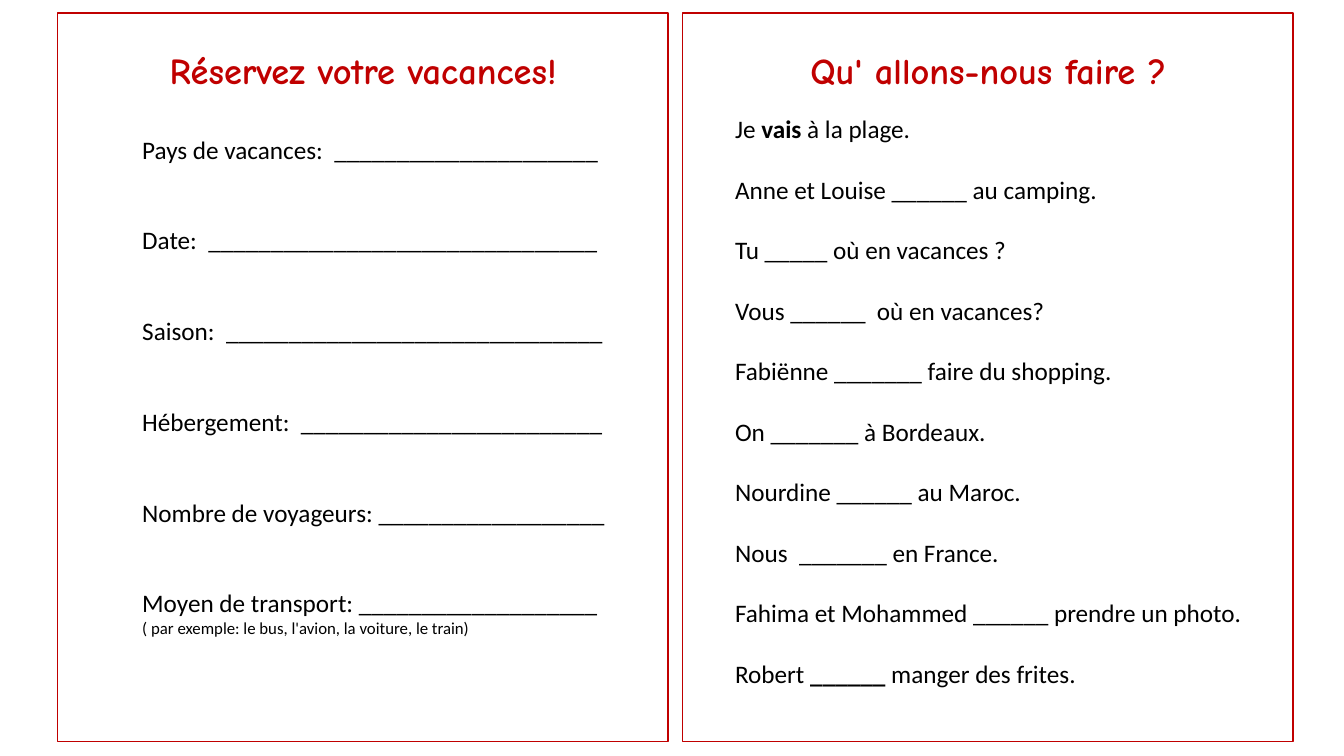
from pptx import Presentation
from pptx import util as u
from pptx.dml.color import RGBColor
from pptx.enum import shapes, text
from lxml import etree

RED = RGBColor(0xC0, 0x00, 0x00)
BLACK = RGBColor(0x00, 0x00, 0x00)
WHITE = RGBColor(0xFF, 0xFF, 0xFF)
A = "{http://schemas.openxmlformats.org/drawingml/2006/main}"

BOOKING = [
    "Pays de vacances:  _____________________",
    "Date:  _______________________________",
    "Saison:  ______________________________",
    "Hébergement:  ________________________",
    "Nombre de voyageurs: __________________",
    "Moyen de transport: ___________________",
    "( par exemple: le bus, l'avion, la voiture, le train)",
]
SENTENCES = [
    "Je *vais* à la plage.",
    "Anne et Louise ______ au camping.",
    "Tu _____ où en vacances ?",
    "Vous ______  où en vacances?",
    "Fabiënne _______ faire du shopping.",
    "On _______ à Bordeaux.",
    "Nourdine ______ au Maroc.",
    "Nous  _______ en France.",
    "Fahima et Mohammed ______ prendre un photo.",
    "Robert *______* manger des frites.",
]


def place(sp, x, y, w, h):
    """Move a placeholder and return its text frame, anchored at the top."""
    sp.left, sp.top, sp.width, sp.height = (u.Cm(v) for v in (x, y, w, h))
    tf = sp.text_frame
    tf.word_wrap = True
    tf.auto_size = text.MSO_AUTO_SIZE.NONE
    tf.vertical_anchor = text.MSO_ANCHOR.TOP
    return tf


def format_paragraph(p, align, gap=0):
    """Give a paragraph plain, unbulleted spacing."""
    p.alignment = align
    p.line_spacing = 1.0
    p.space_before, p.space_after = u.Pt(0), u.Pt(gap)
    pPr = p._p.get_or_add_pPr()
    pPr.set("marL", "0")
    pPr.set("indent", "0")
    etree.SubElement(pPr, A + "buNone")


def format_run(r, name, size, color, bold=False):
    """Set the font of a run."""
    r.font.name, r.font.size, r.font.bold = name, u.Pt(size), bold
    r.font.color.rgb = color


def draw_frame(slide, x, y, w, h):
    """Draw a card outline behind the text."""
    sp = slide.shapes.add_shape(shapes.MSO_SHAPE.RECTANGLE, *(u.Cm(v) for v in (x, y, w, h)))
    sp.shadow.inherit = False
    sp.fill.solid()
    sp.fill.fore_color.rgb = WHITE
    sp.line.color.rgb = RED
    sp.line.width = u.Pt(1)
    slide.shapes._spTree.insert(2, sp._element)


def fill_title(sp, title, x, y, w, h):
    """Write a centred red card title."""
    tf = place(sp, x, y, w, h)
    tf.text = title
    p = tf.paragraphs[0]
    format_paragraph(p, text.PP_ALIGN.CENTER)
    format_run(p.runs[0], "Comic Neue", 26, RED, True)


def fill_list(sp, lines, gap, x, y, w, h):
    """Write evenly spaced lines, with starred parts in bold and hints in small type."""
    tf = place(sp, x, y, w, h)
    for i, line in enumerate(lines):
        p = tf.paragraphs[0] if i == 0 else tf.add_paragraph()
        hint_next = i + 1 < len(lines) and lines[i + 1].startswith("(")
        format_paragraph(p, text.PP_ALIGN.LEFT, 0 if hint_next else gap)
        size = 12 if line.startswith("(") else 18
        for k, part in enumerate(line.split("*")):
            r = p.add_run()
            r.text = part
            format_run(r, "Calibri", size, BLACK, k % 2 == 1)


def booking_card(slide, title, body, x, y, w, h):
    """Build the holiday booking form."""
    draw_frame(slide, x, y, w, h)
    fill_title(title, "Réservez votre vacances!", x + 2.41, y + 0.76, 10.59, 2)
    fill_list(body, BOOKING, 43.2, x + 1.88, y + 2.92, 12.24, 14.88)


def exercise_card(slide, title, body, x, y, w, h):
    """Build the fill-in exercise."""
    draw_frame(slide, x, y, w, h)
    fill_title(title, "Qu' allons-nous faire ?", x + 1.24, y + 0.76, 12.95, 2)
    fill_list(body, SENTENCES, 21.6, x + 1.07, y + 2.41, 13.79, 15.4)


def main():
    """Build and save the worksheet slide."""
    prs = Presentation()
    prs.slide_width, prs.slide_height = u.Cm(33.87), u.Cm(19.05)
    slide = prs.slides.add_slide(prs.slide_layouts[4])
    ph = {sp.placeholder_format.idx: sp for sp in slide.placeholders}
    top, width, height = 0.33, 15.39, 18.36
    booking_card(slide, ph[0], ph[2], 1.45, top, width, height)
    exercise_card(slide, ph[3], ph[4], 17.2, top, width, height)
    unused = ph[1]._element
    unused.getparent().remove(unused)
    prs.save("out.pptx")


if __name__ == "__main__":
    main()
